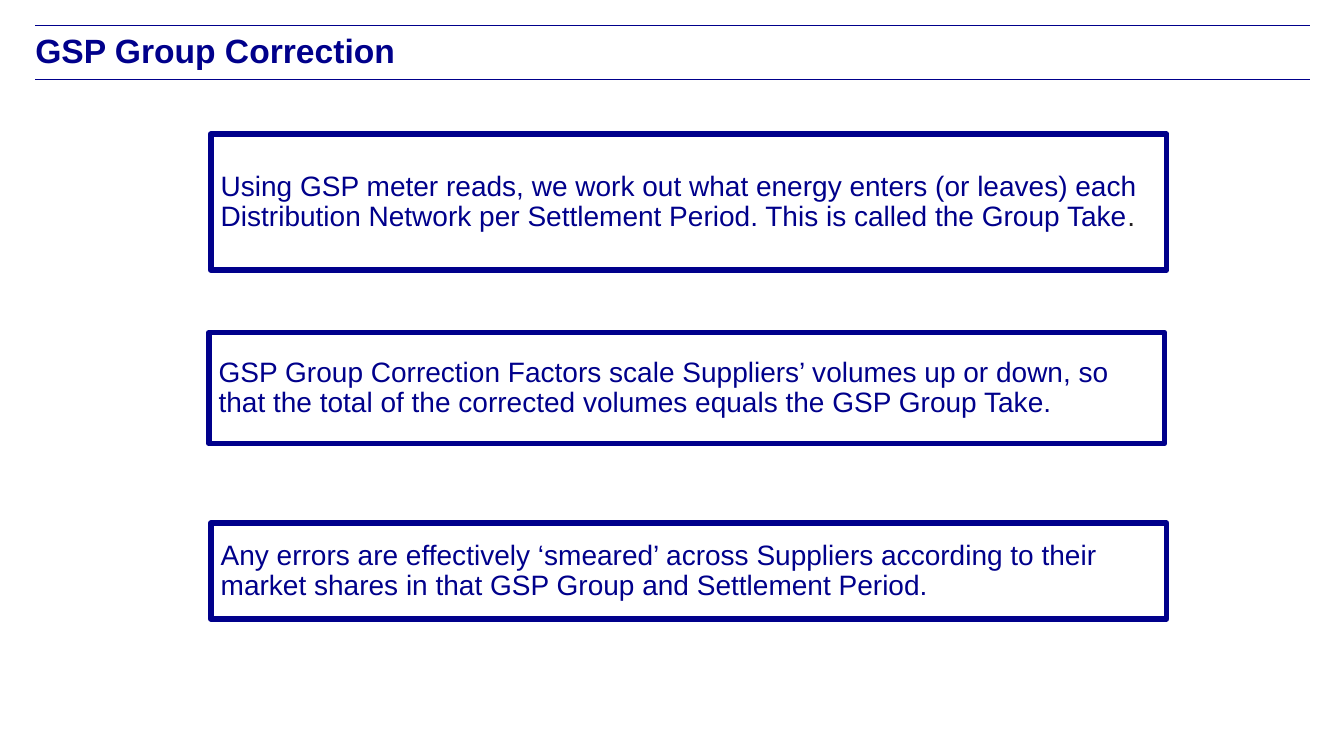
from lxml.etree import SubElement
from pptx import Presentation
from pptx.dml.color import RGBColor
from pptx.enum.shapes import MSO_CONNECTOR, MSO_SHAPE
from pptx.enum.text import MSO_ANCHOR, PP_ALIGN
from pptx.oxml.ns import qn
from pptx.util import Inches, Pt

NAVY, BLACK, WHITE = "00008B", "231F20", "FFFFFF"
LEFT, WIDTH = 0.35, 12.64
BOX_WIDTH = 9.48


def paint(target, colour):
    if hasattr(target, "solid"):
        target.solid()
        target = target.fore_color
    target.rgb = RGBColor.from_string(colour)


def style_text(p, size, bold=False):
    p.alignment = PP_ALIGN.LEFT
    p.font.name = "Arial"
    p.font.size = Pt(size)
    p.font.bold = bold
    paint(p.font.color, NAVY)


def add_title(s, text):
    sp = s.shapes.title
    sp.left, sp.top = Inches(LEFT), Inches(0.3)
    sp.width, sp.height = Inches(WIDTH), Inches(0.49)
    tf = sp.text_frame
    tf.margin_left = tf.margin_top = tf.margin_right = tf.margin_bottom = 0
    tf.vertical_anchor = MSO_ANCHOR.TOP
    tf.word_wrap = True
    p = tf.paragraphs[0]
    p.add_run().text = text
    style_text(p, 24, bold=True)


def add_rule(s, y):
    line = s.shapes.add_connector(
        MSO_CONNECTOR.STRAIGHT, Inches(LEFT), Inches(y), Inches(LEFT + WIDTH), Inches(y))
    paint(line.line.color, NAVY)
    line.line.width = Pt(0.5)
    SubElement(line._element.spPr, qn("a:effectLst"))


def add_box(s, left, top, height, runs):
    sp = s.shapes.add_shape(
        MSO_SHAPE.RECTANGLE, Inches(left), Inches(top), Inches(BOX_WIDTH), Inches(height))
    sp.shadow.inherit = False
    paint(sp.fill, WHITE)
    paint(sp.line.color, NAVY)
    sp.line.width = Pt(4)
    tf = sp.text_frame
    tf.word_wrap = True
    tf.vertical_anchor = MSO_ANCHOR.MIDDLE
    p = tf.paragraphs[0]
    p.line_spacing = 0.9
    style_text(p, 20)
    for text, colour in runs:
        r = p.add_run()
        r.text = text
        paint(r.font.color, colour)


def main():
    prs = Presentation()
    prs.slide_width, prs.slide_height = Inches(13.33), Inches(7.5)
    s = prs.slides.add_slide(prs.slide_layouts[5])
    for y in (0.25, 0.79):
        add_rule(s, y)
    add_title(s, "GSP Group Correction")
    boxes = [
        (2.09, 1.33, 1.35, [
            ("Using GSP meter reads, we work out what energy enters (or leaves) each "
             "Distribution Network per Settlement Period. This is called the Group Take", NAVY),
            (".", BLACK)]),
        (2.07, 3.3, 1.1, [
            ("GSP Group Correction Factors scale Suppliers’ volumes up or down, so that "
             "the total of the corrected volumes equals the GSP Group Take.", NAVY)]),
        (2.09, 5.19, 0.95, [
            ("Any errors are effectively ‘smeared’ across Suppliers according to their "
             "market shares in that GSP Group and Settlement Period.", NAVY)]),
    ]
    for box in boxes:
        add_box(s, *box)
    prs.save("out.pptx")


if __name__ == "__main__":
    main()
